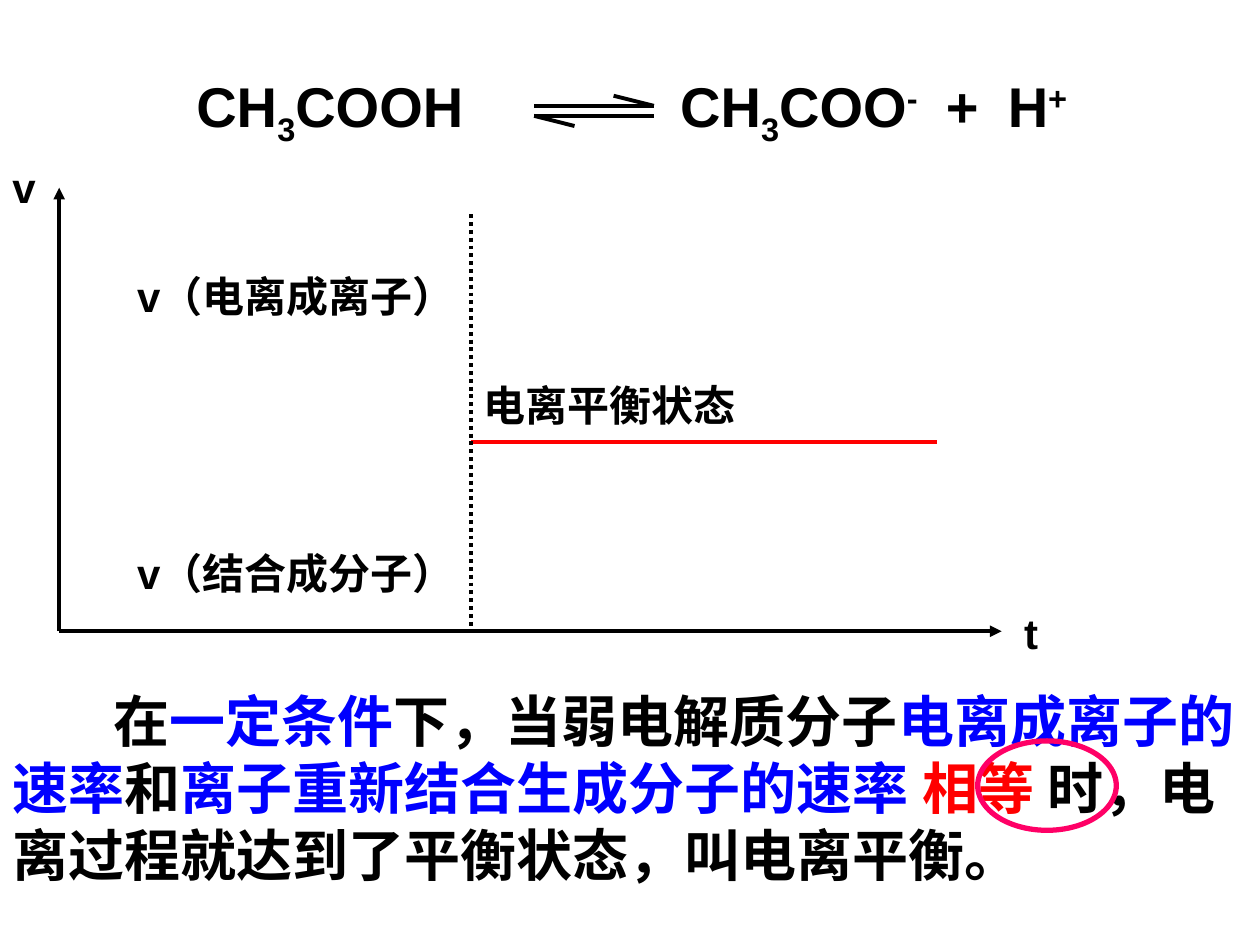
from lxml import etree
from pptx import Presentation
from pptx.dml.color import RGBColor
from pptx.enum.dml import MSO_LINE
from pptx.enum.shapes import MSO_CONNECTOR, MSO_SHAPE
from pptx.oxml.ns import qn
from pptx.util import Inches, Pt

STRAIGHT = MSO_CONNECTOR.STRAIGHT
OVAL = MSO_SHAPE.OVAL
DOTTED = MSO_LINE.ROUND_DOT
FONT = "Arial"
COLORS = {"black": "000000", "blue": "0000FF", "red": "FF0000", "pink": "FF0066"}
BLANK_LAYOUT = 6
LABEL_HEIGHT = 0.5


def rgb(name):
    """Return the named colour."""
    return RGBColor.from_string(COLORS[name])


def add_run(p, text, size, color="black", baseline=0):
    """Append one bold run, raised or lowered by a baseline percentage."""
    r = p.add_run()
    r.text = text
    r.font.name, r.font.size, r.font.bold = FONT, Pt(size), True
    r.font.color.rgb = rgb(color)
    if baseline:
        r.font._element.set("baseline", str(baseline * 1000))


def add_text(s, left, top, width, height):
    """Add a wrapping text box and return its first paragraph."""
    tf = s.shapes.add_textbox(*map(Inches, (left, top, width, height))).text_frame
    tf.word_wrap = True
    return tf.paragraphs[0]


def add_label(s, text, left, top, width):
    """Add a one-line chart label."""
    add_run(add_text(s, left, top, width, LABEL_HEIGHT), text, 24)


def add_line(s, start, end, color="black", dash=None, arrow=False):
    """Add a straight line, optionally dashed or with an arrowhead."""
    sp = s.shapes.add_connector(STRAIGHT, *map(Inches, (*start, *end)))
    sp.line.color.rgb = rgb(color)
    sp.line.width = Pt(2.25)
    if dash:
        sp.line.dash_style = dash
    if arrow:
        etree.SubElement(sp.line._get_or_add_ln(), qn("a:tailEnd"), type="triangle")
    etree.SubElement(sp._element.spPr, qn("a:effectLst"))


def add_tab_stops(p, stops):
    """Set left tab stops, measured from the text edge."""
    tabs = etree.SubElement(p._p.get_or_add_pPr(), qn("a:tabLst"))
    for stop in stops:
        etree.SubElement(tabs, qn("a:tab"), pos=str(Inches(stop)), algn="l")


def add_equation(s):
    """Add the ionisation equation with its reversible arrows."""
    p = add_text(s, 1.46, 0.52, 7.4, 0.63)
    add_tab_stops(p, (3.84, 5.95, 6.44))
    for text, baseline in (("CH", 0), ("3", -25), ("COOH\tCH", 0), ("3", -25),
                           ("COO", 0), ("-", 30), ("\t+\tH", 0), ("+", 30)):
        add_run(p, text, 32, baseline=baseline)
    left, right, barb = 4.24, 5.19, 0.32
    for y, tip, tail, rise in ((0.84, right, left, -0.08), (0.92, left, right, 0.08)):
        back = tip - barb if tip > tail else tip + barb
        add_line(s, (tail, y), (tip, y))
        add_line(s, (back, y + rise), (tip, y))


def add_rate_chart(s):
    """Add the rate-time axes, the equilibrium lines and their labels."""
    x0, y0, x_eq, y_eq = 0.47, 5.01, 3.74, 3.51
    add_line(s, (x0, y0), (x0, 1.49), arrow=True)
    add_line(s, (x0, y0), (7.95, y0), arrow=True)
    add_line(s, (x_eq, y_eq), (7.44, y_eq), color="red")
    add_line(s, (x_eq, 1.7), (x_eq, y0), dash=DOTTED)
    for label in (("t", 8.03, 4.77, 0.55), ("v", 0, 1.23, 0.55),
                  ("v（电离成离子）", 0.99, 2.1, 3.31),
                  ("v（结合成分子）", 0.99, 4.3, 3.38),
                  ("电离平衡状态", x_eq, 2.96, 2.76)):
        add_label(s, *label)


def add_definition(s):
    """Add the definition of ionisation equilibrium and its ring."""
    p = add_text(s, 0, 5.4, 10, 1.7)
    p._p.get_or_add_pPr().set("indent", str(Inches(0.8)))
    for text, color in (("在", "black"), ("一定条件", "blue"),
                        ("下，当弱电解质分子", "black"), ("电离成离子的速率", "blue"),
                        ("和", "black"), ("离子重新结合生成分子的速率 ", "blue"),
                        ("相等 ", "red"),
                        ("时，电离过程就达到了平衡状态，叫电离平衡。", "black")):
        add_run(p, text, 32, color)
    sp = s.shapes.add_shape(OVAL, *map(Inches, (7.76, 5.88, 1.1, 0.71)))
    sp.shadow.inherit = False
    sp.fill.background()
    sp.line.color.rgb = rgb("pink")
    sp.line.width = Pt(3)


def main():
    """Build and save the slide."""
    prs = Presentation()
    prs.slide_width, prs.slide_height = Inches(10), Inches(7.5)
    s = prs.slides.add_slide(prs.slide_layouts[BLANK_LAYOUT])
    add_definition(s)
    add_equation(s)
    add_rate_chart(s)
    prs.save("out.pptx")


if __name__ == "__main__":
    main()
